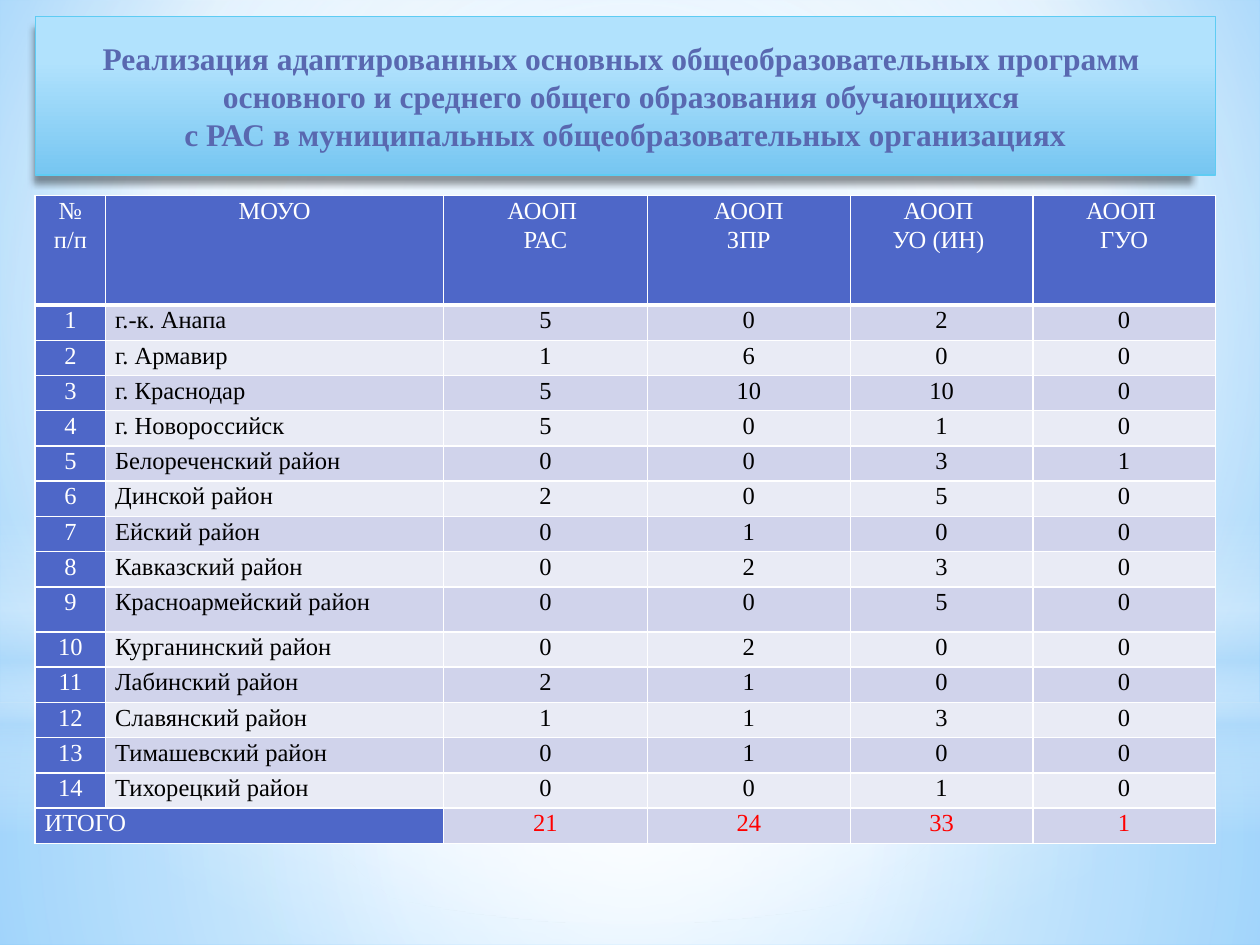
from typing import NamedTuple

from pptx import Presentation
from pptx.dml.color import RGBColor as Rgb
from pptx.enum.shapes import MSO_SHAPE as Form
from pptx.enum.text import MSO_ANCHOR as Anchor, MSO_AUTO_SIZE as Fit, PP_ALIGN as Align
from pptx.oxml import parse_xml
from pptx.oxml.ns import nsdecls, qn
from pptx.util import Cm, Pt

FONT = "Times New Roman"
WHITE = Rgb(0xFF, 0xFF, 0xFF)
BLACK = Rgb(0x00, 0x00, 0x00)
RED = Rgb(0xFF, 0x00, 0x00)
BLUE = Rgb(0x4E, 0x67, 0xC8)
DARK = Rgb(0xD0, 0xD3, 0xEB)
LIGHT = Rgb(0xE9, 0xEB, 0xF5)
INK = Rgb(0x59, 0x68, 0xB0)
EDGE = Rgb(0x5E, 0xCC, 0xF3)
SKY = Rgb(0xB4, 0xDC, 0xFA)
PALE = Rgb(0xB1, 0xE2, 0xFD)
DEEP = Rgb(0x76, 0xC6, 0xF1)
MIST = Rgb(0x9E, 0xD5, 0xFF)
RIM = Rgb(0x5B, 0xB9, 0xFF)


class Stop(NamedTuple):
    place: int
    tone: Rgb
    alpha: int = 100


class Glow(NamedTuple):
    """A soft background shape; without a focus its gradient runs downwards."""
    form: Form
    top: float
    height: float
    stops: list[Stop]
    focus: tuple[int, ...] | None = (50, 50, 50, 50)


class Area(NamedTuple):
    name: str
    counts: tuple[int, ...]


GLOWS = [
    Glow(Form.RECTANGLE, 14.17, 4.88,
         [Stop(0, WHITE, 91), Stop(37, WHITE, 76), Stop(100, SKY, 79)]),
    Glow(Form.RECTANGLE, 0, 14.17,
         [Stop(0, WHITE, 89), Stop(48, WHITE, 62), Stop(100, SKY, 79)]),
    Glow(Form.RECTANGLE, 10.46, 6.35,
         [Stop(0, WHITE, 0), Stop(29, WHITE, 30), Stop(45, SKY, 40),
          Stop(55, WHITE, 26), Stop(65, SKY, 60), Stop(100, WHITE, 0)], None),
    Glow(Form.OVAL, 4.45, 14.17, [Stop(0, WHITE), Stop(56, WHITE, 0)]),
]
TITLE = [
    "Реализация адаптированных основных общеобразовательных программ ",
    "основного и среднего общего образования обучающихся ",
    "с РАС в муниципальных общеобразовательных организациях",
]
HEADS = [["№ п/п"], ["МОУО"], ["АООП ", "РАС"], ["АООП", "ЗПР"],
         ["АООП ", "УО (ИН) "], ["АООП ", "ГУО"]]
AREAS = [
    Area("г.-к. Анапа", (5, 0, 2, 0)),
    Area("г. Армавир", (1, 6, 0, 0)),
    Area("г. Краснодар", (5, 10, 10, 0)),
    Area("г. Новороссийск", (5, 0, 1, 0)),
    Area("Белореченский район", (0, 0, 3, 1)),
    Area("Динской район", (2, 0, 5, 0)),
    Area("Ейский район", (0, 1, 0, 0)),
    Area("Кавказский район", (0, 2, 3, 0)),
    Area("Красноармейский район", (0, 0, 5, 0)),
    Area("Курганинский район", (0, 2, 0, 0)),
    Area("Лабинский район", (2, 1, 0, 0)),
    Area("Славянский район", (1, 1, 3, 0)),
    Area("Тимашевский район", (0, 1, 0, 0)),
    Area("Тихорецкий район", (0, 0, 1, 0)),
]
WIDTHS = [1.42, 6.81, 4.11, 4.09, 3.68, 3.68]
HEAD, ROW, TALL = 2.21, 0.71, 0.91
TALL_ROW = 9
LEFT, WIDE = 0.71, 23.79


def shade(fill, root, stops: list[Stop], focus=None) -> None:
    """Put a gradient with transparency in place of the fill found under root."""
    fill.background()
    marks = "".join(
        f'<a:gs pos="{s.place * 1000}"><a:srgbClr val="{s.tone}">'
        f'<a:alpha val="{s.alpha * 1000}"/></a:srgbClr></a:gs>' for s in stops)
    if focus:
        sides = " ".join(f'{side}="{part * 1000}"' for side, part in zip("ltrb", focus))
        way = f'<a:path path="circle"><a:fillToRect {sides}/></a:path>'
    else:
        way = '<a:lin ang="5400000" scaled="0"/>'
    blend = parse_xml(f'<a:gradFill {nsdecls("a")} rotWithShape="1">'
                      f'<a:gsLst>{marks}</a:gsLst>{way}</a:gradFill>')
    old = next(root.iter(qn("a:noFill")))
    old.getparent().replace(old, blend)


def add_glow(slide, glow: Glow) -> None:
    shape = slide.shapes.add_shape(glow.form, 0, Cm(glow.top), Cm(25.4), Cm(glow.height))
    shade(shape.fill, shape._element, glow.stops, glow.focus)
    shape.line.fill.background()
    shape.shadow.inherit = False


def style(run, size: int, tone: Rgb, bold: bool = False) -> None:
    font = run.font
    font.name, font.size, font.bold = FONT, Pt(size), bold
    font.color.rgb = tone


def set_title(slide) -> None:
    title = slide.shapes.title
    title.left, title.top = Cm(LEFT), Cm(0.33)
    title.width, title.height = Cm(WIDE), Cm(3.2)
    shade(title.fill, title._element, [Stop(28, PALE), Stop(100, DEEP)])
    title.line.color.rgb, title.line.width = EDGE, Pt(0.75)
    title.shadow.inherit = False
    title._element.spPr.find(qn("a:effectLst")).append(parse_xml(
        f'<a:outerShdw {nsdecls("a")} blurRad="50800" dist="76200" dir="5400000" '
        'sx="98000" sy="98000" algn="t" rotWithShape="0">'
        '<a:srgbClr val="000000"><a:alpha val="40000"/></a:srgbClr></a:outerShdw>'))
    frame = title.text_frame
    frame.word_wrap, frame.auto_size = True, Fit.NONE
    frame.vertical_anchor = Anchor.MIDDLE
    para = frame.paragraphs[0]
    para.alignment = Align.CENTER
    for i, line in enumerate(TITLE):
        if i:
            para.add_line_break()
        run = para.add_run()
        run.text = line
        style(run, 18, INK, True)
    # The title belongs in front of the glows
    slide.shapes._spTree.append(title._element)


def fill_cell(cell, lines: list[str], back: Rgb, tone: Rgb, align=Align.CENTER) -> None:
    cell.margin_left = cell.margin_right = Cm(0.19)
    cell.margin_top = cell.margin_bottom = 0
    cell.fill.solid()
    cell.fill.fore_color.rgb = back
    frame = cell.text_frame
    for i, line in enumerate(lines):
        para = frame.add_paragraph() if i else frame.paragraphs[0]
        para.alignment, para.line_spacing = align, 1.07
        run = para.add_run()
        run.text = line
        style(run, 14, tone)


def edge_cell(cell, row: int) -> None:
    """White borders, thick between the heads and the first area."""
    thick = {(0, "B"), (1, "T")}
    props = cell._tc.get_or_add_tcPr()
    for i, side in enumerate("LRTB"):
        width = Pt(3 if (row, side) in thick else 1)
        props.insert(i, parse_xml(
            f'<a:ln{side} {nsdecls("a")} w="{width}"><a:solidFill>'
            f'<a:srgbClr val="{WHITE}"/></a:solidFill></a:ln{side}>'))


def add_grid(slide) -> None:
    last = len(AREAS) + 1
    heights = [HEAD] + [TALL if i == TALL_ROW else ROW for i in range(1, last + 1)]
    grid = slide.shapes.add_table(last + 1, len(WIDTHS), Cm(LEFT), Cm(3.94),
                                  Cm(WIDE), Cm(sum(heights))).table
    grid.first_row = grid.horz_banding = False
    for col, width in zip(grid.columns, WIDTHS):
        col.width = Cm(width)
    for row, height in zip(grid.rows, heights):
        row.height = Cm(height)

    for c, lines in enumerate(HEADS):
        fill_cell(grid.cell(0, c), lines, BLUE, WHITE)
    for r, area in enumerate(AREAS, 1):
        back = DARK if r % 2 else LIGHT
        fill_cell(grid.cell(r, 0), [str(r)], BLUE, WHITE)
        fill_cell(grid.cell(r, 1), [area.name], back, BLACK, Align.LEFT)
        for c, count in enumerate(area.counts, 2):
            fill_cell(grid.cell(r, c), [str(count)], back, BLACK)
    grid.cell(last, 0).merge(grid.cell(last, 1))
    fill_cell(grid.cell(last, 0), ["ИТОГО"], BLUE, WHITE, Align.LEFT)
    for c, counts in enumerate(zip(*(area.counts for area in AREAS)), 2):
        fill_cell(grid.cell(last, c), [str(sum(counts))], DARK, RED)
    for r in range(last + 1):
        for c in range(len(WIDTHS)):
            edge_cell(grid.cell(r, c), r)


def main() -> None:
    deck = Presentation()
    deck.slide_width, deck.slide_height = Cm(25.4), Cm(19.05)
    slide = deck.slides.add_slide(deck.slide_layouts[5])
    shade(slide.background.fill, slide._element,
          [Stop(0, MIST), Stop(60, WHITE), Stop(100, RIM)], (20, 10, 20, 60))
    for glow in GLOWS:
        add_glow(slide, glow)
    set_title(slide)
    add_grid(slide)
    deck.save("out.pptx")


if __name__ == "__main__":
    main()
